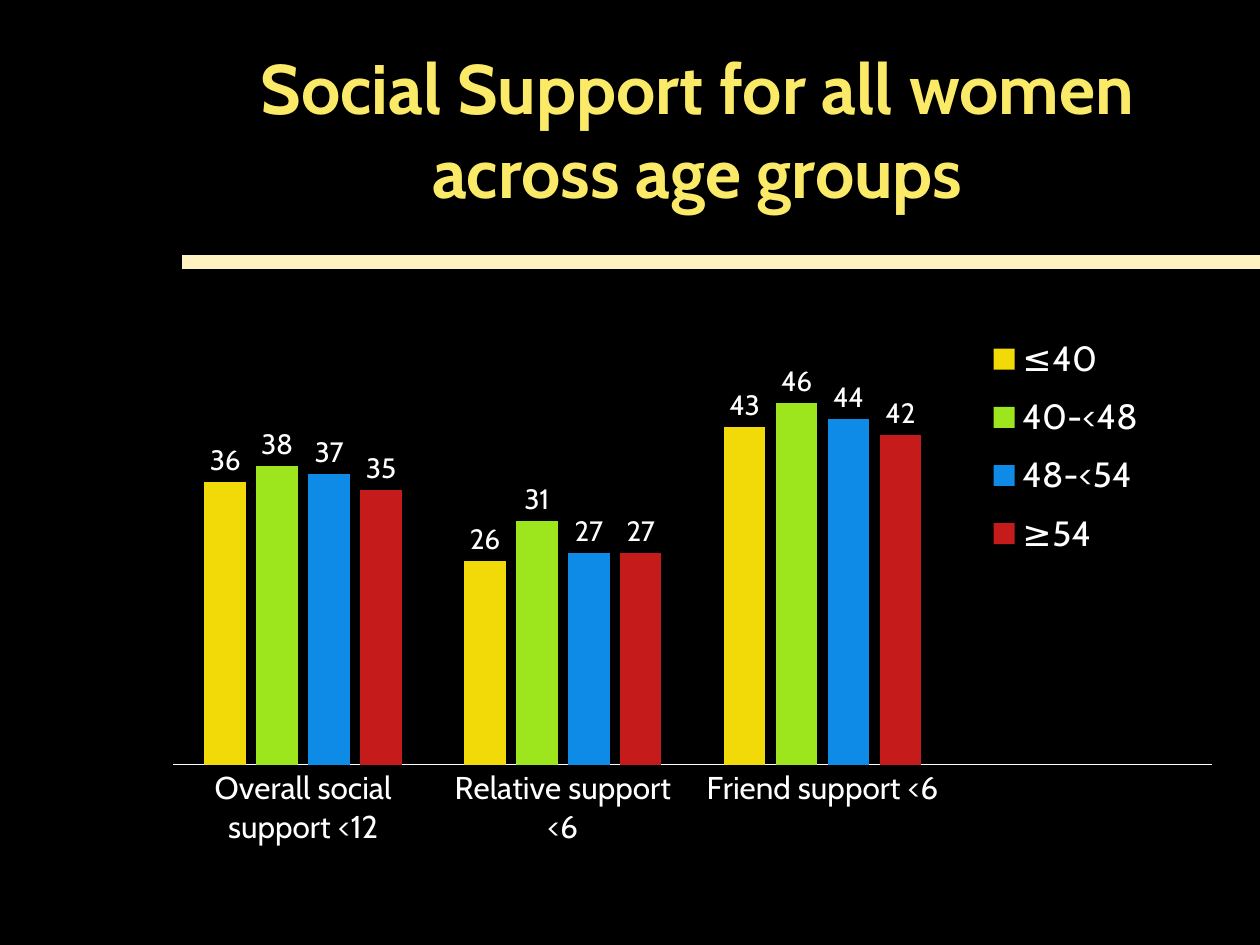
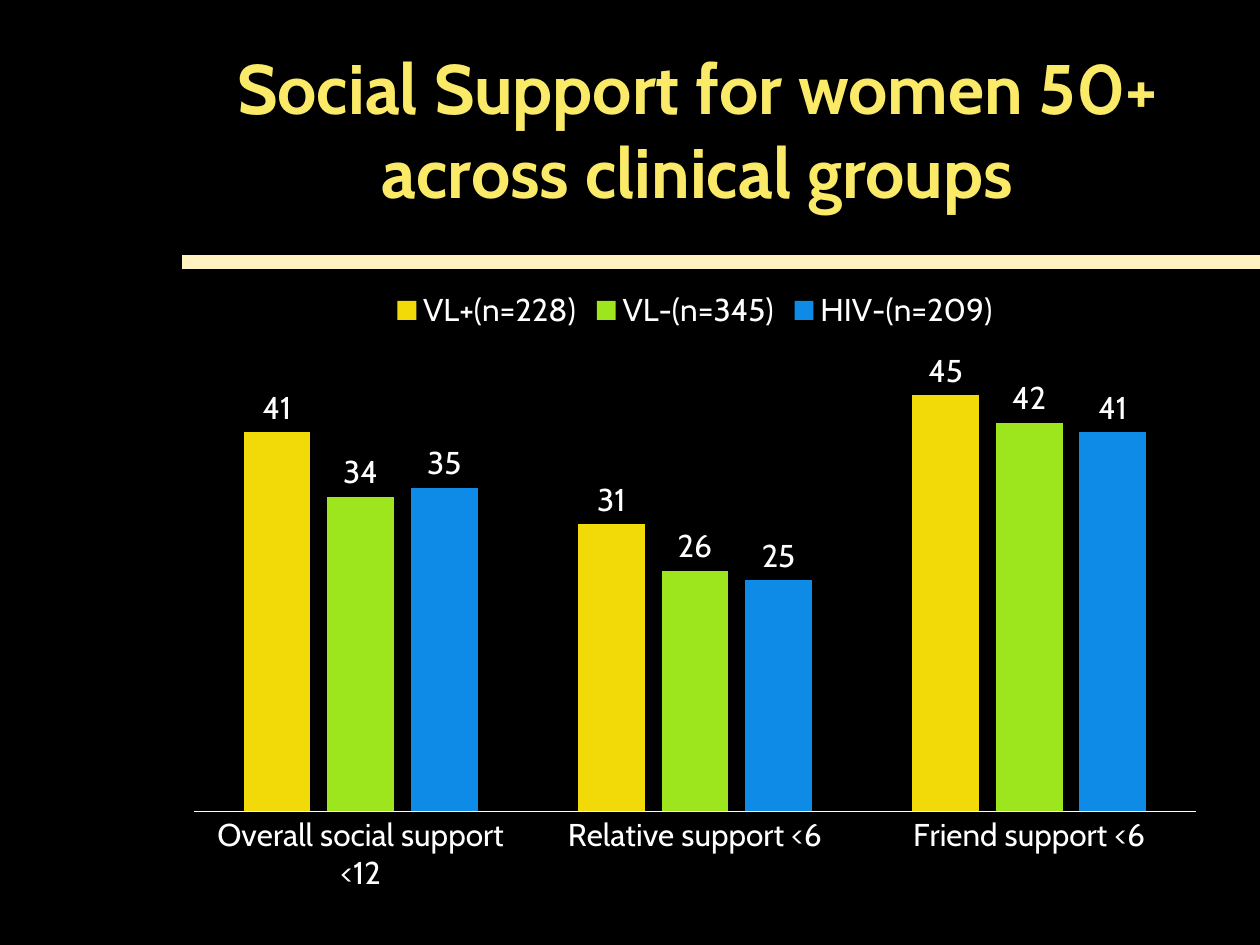
from lxml import etree
from pptx import Presentation
from pptx.chart.data import CategoryChartData
from pptx.dml.color import RGBColor
from pptx.enum.chart import XL_CHART_TYPE, XL_LABEL_POSITION, XL_LEGEND_POSITION, XL_TICK_MARK
from pptx.enum.shapes import MSO_CONNECTOR
from pptx.enum.text import MSO_ANCHOR, PP_ALIGN
from pptx.oxml.ns import qn
from pptx.util import Cm, Pt

COLUMNS = XL_CHART_TYPE.COLUMN_CLUSTERED
OUTSIDE_END = XL_LABEL_POSITION.OUTSIDE_END
LEGEND_TOP = XL_LEGEND_POSITION.TOP
NO_TICKS = XL_TICK_MARK.NONE
STRAIGHT = MSO_CONNECTOR.STRAIGHT
MIDDLE = MSO_ANCHOR.MIDDLE
CENTER = PP_ALIGN.CENTER

FONT = "Cabin"
BLACK, WHITE, TITLE_YELLOW, RULE_CREAM = "000000", "FFFFFF", "FAEA68", "FFF2C0"
GROUP_COLOURS = ["F2D908", "9DE61E", "0D8BE6", "C61B1B"]
SUPPORT_SCALES = ["Overall social support <12", "Relative support <6", "Friend support <6"]


def colour(hex_string):
    return RGBColor.from_string(hex_string)


def style_font(font, size, shade=WHITE, bold=False):
    font.name = FONT
    font.size = Pt(size)
    font.bold = bold
    font.color.rgb = colour(shade)


def write_text(frame, text, size=18, shade=WHITE, bold=False, align=CENTER):
    paragraph = frame.paragraphs[0]
    paragraph.alignment = align
    run = paragraph.add_run()
    run.text = text
    style_font(run.font, size, shade, bold)


def place(parent, index, box, inner=False):
    for layout in parent.findall(qn("c:layout")):
        parent.remove(layout)
    layout = etree.Element(qn("c:layout"))
    parent.insert(index, layout)
    manual = etree.SubElement(layout, qn("c:manualLayout"))
    settings = [("layoutTarget", "inner")] if inner else []
    settings += [("xMode", "edge"), ("yMode", "edge"), *zip("xywh", box)]
    for tag, value in settings:
        etree.SubElement(manual, qn(f"c:{tag}")).set("val", str(value))


class Deck:
    def __init__(self):
        self.presentation = Presentation()
        self.presentation.slide_width = Cm(25.4)
        self.presentation.slide_height = Cm(19.05)
        self.slide = None

    def start_slide(self, title):
        self.slide = self.presentation.slides.add_slide(self.presentation.slide_layouts[6])
        background = self.slide.background.fill
        background.solid()
        background.fore_color.rgb = colour(BLACK)
        self.rule()
        self.title(title)

    def rule(self):
        rule = self.slide.shapes.add_connector(STRAIGHT, Cm(26.42), Cm(5.28), Cm(3.66), Cm(5.28))
        rule.line.color.rgb = colour(RULE_CREAM)
        rule.line.width = Pt(8.25)
        etree.SubElement(rule.element.spPr, qn("a:effectLst"))

    def title(self, text):
        frame = self.slide.shapes.add_textbox(Cm(3.53), Cm(0.3), Cm(21.06), Cm(4.6)).text_frame
        frame.word_wrap = True
        frame.vertical_anchor = MIDDLE
        write_text(frame, text, size=40, shade=TITLE_YELLOW, bold=True)

    def column_chart(self, height, categories, groups, plot_box,
                     label_size=18, legend_size=18, legend_box=None):
        data = CategoryChartData()
        data.categories = categories
        for name, values in groups.items():
            data.add_series(name, values)
        chart = self.slide.shapes.add_chart(
            COLUMNS, Cm(3.48), Cm(5.56), Cm(21.06), Cm(height), data).chart
        style_font(chart.font, 18)
        chart.has_title = False
        self.columns(chart.plots[0], label_size)
        self.axes(chart)
        place(chart.element.find(f".//{qn('c:plotArea')}"), 0, plot_box, inner=True)

        chart.has_legend = True
        legend = chart.legend
        legend.position = LEGEND_TOP
        legend.include_in_layout = False
        style_font(legend.font, legend_size)
        if legend_box:
            place(chart.element.find(f".//{qn('c:legend')}"), 1, legend_box)

    def columns(self, plot, label_size):
        plot.gap_width = 150
        plot.overlap = -25
        plot.vary_by_categories = False
        plot.has_data_labels = True
        labels = plot.data_labels
        labels.show_value = True
        labels.position = OUTSIDE_END
        style_font(labels.font, label_size)
        for series, shade in zip(plot.series, GROUP_COLOURS):
            series.format.fill.solid()
            series.format.fill.fore_color.rgb = colour(shade)

    def axes(self, chart):
        scale = chart.value_axis
        scale.minimum_scale, scale.maximum_scale = 0, 50
        scale.has_major_gridlines = False
        scale.visible = False
        baseline = chart.category_axis
        baseline.major_tick_mark = NO_TICKS
        baseline.format.line.color.rgb = colour(WHITE)
        baseline.format.line.width = Pt(0.75)


def main():
    deck = Deck()

    deck.start_slide("Social Support for all women across age groups")
    age_groups = {
        "≤40": [36, 26, 43, None],
        "40-<48": [38, 31, 46, None],
        "48-<54": [37, 27, 44, None],
        "≥54": [35, 27, 42, None],
    }
    deck.column_chart(13.49, SUPPORT_SCALES + [""], age_groups, (0, 0.144, 0.995, 0.587),
                      label_size=16, legend_size=20, legend_box=(0.76, 0.07, 0.19, 0.37))

    deck.start_slide("Social Support for women 50+ across clinical groups")
    clinical_groups = {
        "VL+(n=228)": [41, 31, 45],
        "VL-(n=345)": [34, 26, 42],
        "HIV-(n=209)": [35, 25, 41],
    }
    deck.column_chart(12.7, SUPPORT_SCALES, clinical_groups, (0.02, 0.116, 0.96, 0.734))

    deck.presentation.save("out.pptx")


if __name__ == "__main__":
    main()
